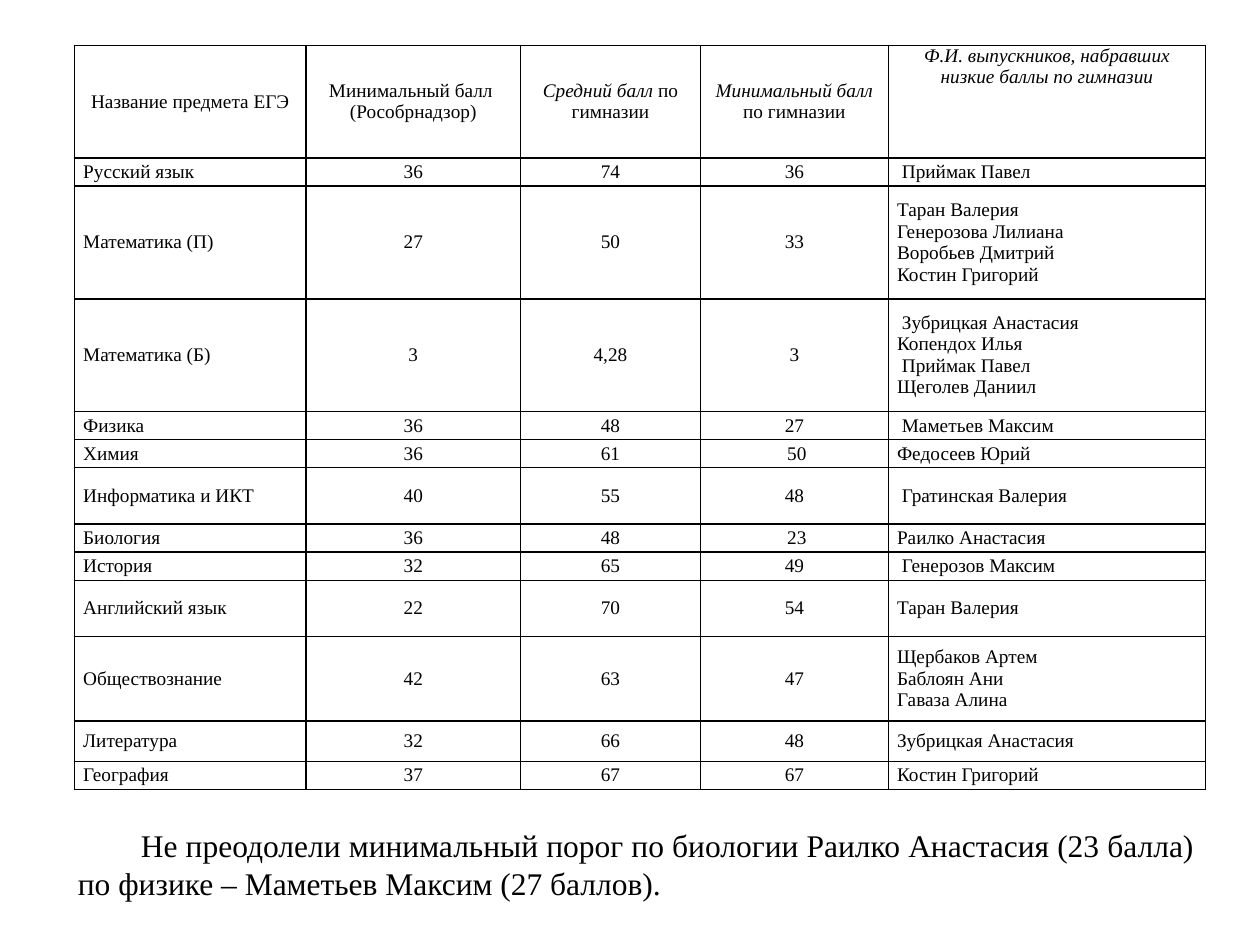
from lxml import etree
from pptx import Presentation
from pptx import util as u
from pptx.dml.color import RGBColor
from pptx.enum import text
from pptx.oxml import ns

HUES = {"ink": "000000", "rule": "000000"}
FONT = "Times New Roman"
WIDTHS = [1.84, 1.7, 1.43, 1.49, 2.52]
UNIT = (5.91 - 0.32) / 25
LIT = 0.32 / UNIT
HEAD = [
    [[("Название предмета ЕГЭ", False)]],
    [[("Минимальный балл ", False)], [("(Рособрнадзор)", False)]],
    [[("Средний балл", True), (" по гимназии", False)]],
    [[("Минимальный балл", True), (" по гимназии", False)]],
    [[("Ф.И. выпускников, набравших низкие баллы по гимназии", True)]],
]
ROWS = [
    (1, "Русский язык", "36", "74", "36", [" Приймак Павел"]),
    (4, "Математика (П)", "27", "50", "33",
     ["Таран Валерия", "Генерозова Лилиана", "Воробьев Дмитрий", "Костин Григорий"]),
    (4, "Математика (Б)", "3", "4,28", "3",
     [" Зубрицкая Анастасия", "Копендох Илья", " Приймак Павел", "Щеголев Даниил"]),
    (1, "Физика", "36", "48", "27", [" Маметьев Максим"]),
    (1, "Химия", "36", "61", " 50", ["Федосеев Юрий"]),
    (2, "Информатика и ИКТ", "40", "55", "48", [" Гратинская Валерия"]),
    (1, "Биология", "36", "48", " 23", ["Раилко Анастасия"]),
    (1, "История", "32", "65", "49", [" Генерозов Максим"]),
    (2, "Английский язык", "22", "70", "54", ["Таран Валерия"]),
    (3, "Обществознание", "42", "63", "47",
     ["Щербаков Артем", "Баблоян Ани", "Гаваза Алина"]),
    (LIT, "Литература", "32", "66", "48", ["Зубрицкая Анастасия"]),
    (1, "География", "37", "67", "67", ["Костин Григорий"]),
]


def add_run(para, words, size, slant=False):
    run = para.add_run()
    run.text = words
    run.font.name = FONT
    run.font.size = u.Pt(size)
    run.font.italic = slant
    run.font.color.rgb = RGBColor.from_string(HUES["ink"])


def add_rules(cell):
    props = cell._tc.get_or_add_tcPr()
    for spot, side in enumerate(("lnL", "lnR", "lnT", "lnB")):
        line = etree.Element(ns.qn("a:" + side), w=str(u.Pt(1)))
        fill = etree.SubElement(line, ns.qn("a:solidFill"))
        etree.SubElement(fill, ns.qn("a:srgbClr"), val=HUES["rule"])
        props.insert(spot, line)


def fill_cell(cell, paras, align, anchor):
    cell.fill.background()
    cell.margin_left = cell.margin_right = u.Inches(0.07)
    cell.margin_top = cell.margin_bottom = 0
    cell.vertical_anchor = anchor
    frame = cell.text_frame
    for num, runs in enumerate(paras):
        para = frame.add_paragraph() if num else frame.paragraphs[0]
        para.alignment = align
        for words, slant in runs:
            add_run(para, words, 11, slant)
    add_rules(cell)


def add_scores(slide, left, top, width, height):
    grid = slide.shapes.add_table(
        len(ROWS) + 1, len(WIDTHS), u.Inches(left), u.Inches(top),
        u.Inches(width), u.Inches(height)).table
    grid.first_row = grid.horz_banding = False
    for col, wide in zip(grid.columns, WIDTHS):
        col.width = u.Inches(wide)
    for row, units in zip(grid.rows, [4] + [item[0] for item in ROWS]):
        row.height = u.Inches(units * UNIT)

    mid, last = text.MSO_ANCHOR.MIDDLE, len(WIDTHS) - 1
    for c, paras in enumerate(HEAD):
        anchor = text.MSO_ANCHOR.TOP if c == last else mid
        fill_cell(grid.cell(0, c), paras, text.PP_ALIGN.CENTER, anchor)
    for r, (_, *marks, names) in enumerate(ROWS, 1):
        for c, lines in enumerate([[mark] for mark in marks] + [names]):
            align = text.PP_ALIGN.LEFT if c in (0, last) else text.PP_ALIGN.CENTER
            fill_cell(grid.cell(r, c), [[(line, False)] for line in lines], align, mid)


def add_note(slide, left, top, width, height):
    box = slide.shapes.add_textbox(
        u.Inches(left), u.Inches(top), u.Inches(width), u.Inches(height))
    frame = box.text_frame
    frame.word_wrap = True
    frame.auto_size = text.MSO_AUTO_SIZE.SHAPE_TO_FIT_TEXT
    para = frame.paragraphs[0]
    para.alignment = text.PP_ALIGN.JUSTIFY
    para._p.get_or_add_pPr().set("indent", str(u.Inches(0.5)))
    add_run(para, "Не преодолели минимальный порог по биологии Раилко Анастасия "
            "(23 балла) по физике – Маметьев Максим (27 баллов).", 18)


def main():
    deck = Presentation()
    deck.slide_width, deck.slide_height = u.Inches(10), u.Inches(7.5)
    slide = deck.slides.add_slide(deck.slide_layouts[6])
    add_scores(slide, 0.59, 0.36, 8.98, 5.91)
    add_note(slide, 0.52, 6.51, 9.06, 0.71)
    deck.save("out.pptx")


if __name__ == "__main__":
    main()
